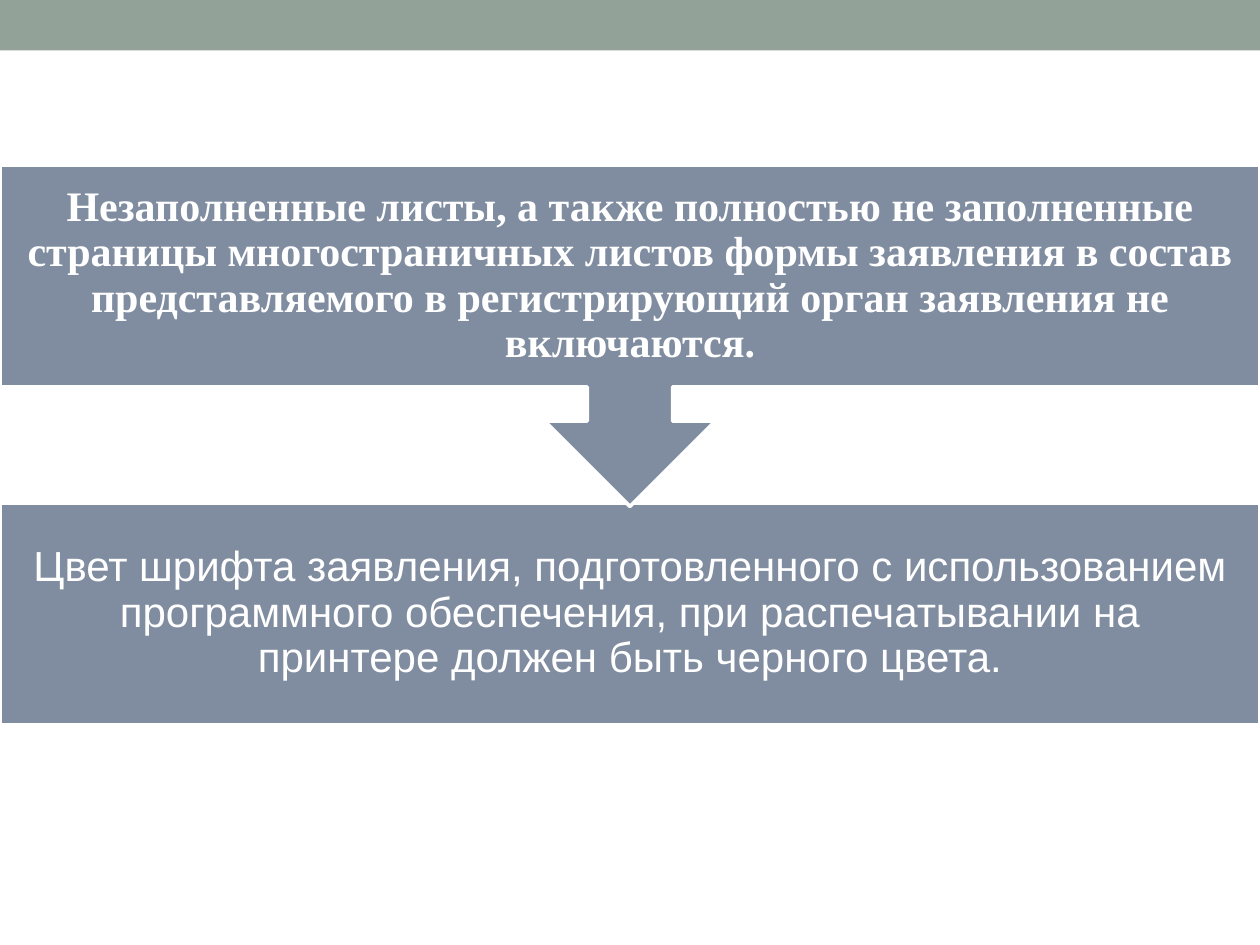
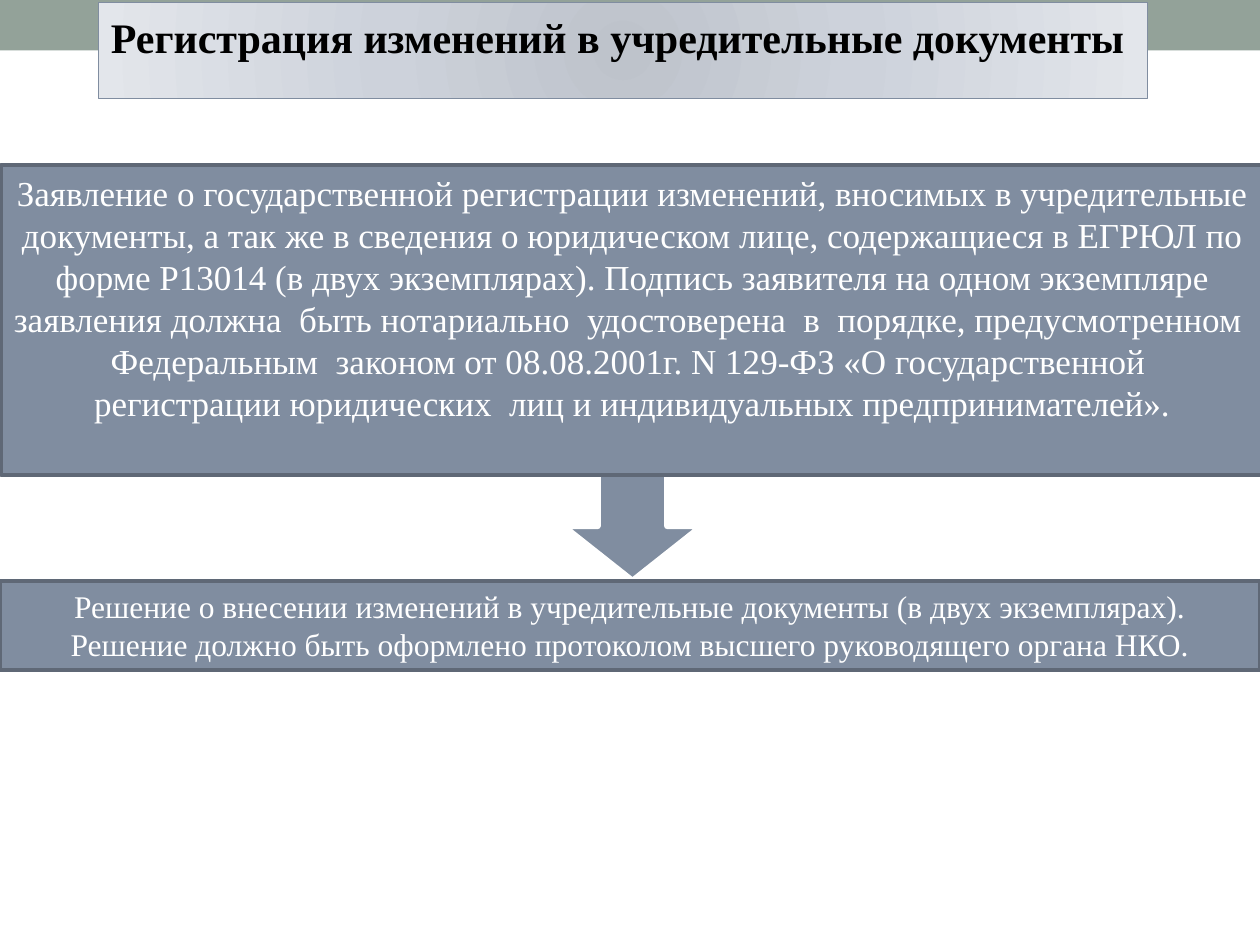
from dataclasses import dataclass

from pptx import Presentation
from pptx import util as u
from pptx.dml.color import RGBColor
from pptx.enum import shapes, text
from pptx.oxml import parse_xml
from pptx.oxml.ns import nsdecls, qn


@dataclass(frozen=True)
class Theme:
    band: str = "93A299"
    panel: str = "808DA0"
    panel_edge: str = "5F6876"
    white: str = "FFFFFF"
    black: str = "000000"
    title_stops: tuple = ((0, "BEC3CB"), (45, "CDD2DB"), (100, "E3E6EB"))
    serif: str = "Times New Roman"
    sans: str = "Arial"
    large: int = 24
    medium: int = 20
    small: int = 18
    edge: float = 2.08
    arrow_edge: float = 3.5
    title_edge: float = 0.75


TITLE_ONLY, BLANK = 5, 6
KIND = shapes.MSO_SHAPE


class Deck:
    """Holds the style and the current slide."""

    def __init__(self, theme):
        self.theme = theme
        self.show = Presentation()
        self.show.slide_width, self.show.slide_height = u.Inches(10), u.Inches(7.5)
        self.slide = None

    def new_slide(self, layout):
        self.slide = self.show.slides.add_slide(self.show.slide_layouts[layout])

    def master_band(self):
        """Draw the top band and move it to the master, behind everything."""
        band = self.shape(KIND.RECTANGLE, (0, 0, 10, 0.4), self.theme.band)
        band._element.nvSpPr.cNvPr.set("id", "100")
        self.show.slide_master.shapes._spTree.insert(2, band._element)

    def shape(self, kind, box, fill, edge=None, width=None):
        part = self.slide.shapes.add_shape(kind, *map(u.Inches, box))
        part.shadow.inherit = False
        part.fill.solid()
        part.fill.fore_color.rgb = RGBColor.from_string(fill)
        self.outline(part, edge, width)
        return part

    def outline(self, part, edge, width):
        if edge is None:
            part.line.fill.background()
        else:
            part.line.color.rgb = RGBColor.from_string(edge)
            part.line.width = u.Pt(width)

    def wording(self, part, words, color, size, font, bold=False, insets=(0.1, 0.05),
                anchor=text.MSO_ANCHOR.TOP, align=text.PP_ALIGN.CENTER, spacing=1.0):
        frame = part.text_frame
        frame.text = words
        side, top = map(u.Inches, insets)
        paragraph = frame.paragraphs[0]
        letters = paragraph.runs[0].font
        letters.color.rgb = RGBColor.from_string(color)
        formats = (
            (frame, {"word_wrap": True, "auto_size": text.MSO_AUTO_SIZE.NONE,
                     "vertical_anchor": anchor, "margin_left": side,
                     "margin_right": side, "margin_top": top, "margin_bottom": top}),
            (paragraph, {"alignment": align, "line_spacing": spacing}),
            (letters, {"name": font, "size": u.Pt(size), "bold": bold}),
        )
        for target, values in formats:
            for name, value in values.items():
                setattr(target, name, value)

    def title(self, words, box):
        heading = self.slide.shapes.title
        for name, value in zip(("left", "top", "width", "height"), box):
            setattr(heading, name, u.Inches(value))
        self.radial_fill(heading)
        self.outline(heading, self.theme.panel, self.theme.title_edge)
        self.wording(heading, words, self.theme.black, self.theme.large, self.theme.serif,
                     bold=True, insets=(0.1, 0.07), align=text.PP_ALIGN.LEFT)

    def radial_fill(self, part):
        stops = "".join(f'<a:gs pos="{at * 1000}"><a:srgbClr val="{color}"/></a:gs>'
                        for at, color in self.theme.title_stops)
        radial = parse_xml(
            f'<a:gradFill {nsdecls("a")} rotWithShape="1"><a:gsLst>{stops}</a:gsLst>'
            '<a:path path="circle"><a:fillToRect l="100000" t="100000" r="100000" b="100000"/>'
            '</a:path></a:gradFill>')
        part.fill.gradient()
        properties = part._element.spPr
        properties.replace(properties.find(qn("a:gradFill")), radial)

    def flow_panel(self, kind, box, words, font, bold=False):
        """White-edged panel with middle-anchored text."""
        panel = self.shape(kind, box, self.theme.panel, self.theme.white, self.theme.edge)
        self.wording(panel, words, self.theme.white, self.theme.large, font, bold=bold,
                     insets=(0.19, 0.19), anchor=text.MSO_ANCHOR.MIDDLE, spacing=0.9)

    def document_panel(self, box, words, size):
        """Dark-edged panel with text from the top."""
        panel = self.shape(KIND.RECTANGLE, box, self.theme.panel,
                           self.theme.panel_edge, self.theme.edge)
        self.wording(panel, words, self.theme.white, size, self.theme.serif)

    def arrow(self, box):
        self.shape(KIND.DOWN_ARROW, box, self.theme.panel,
                   self.theme.white, self.theme.arrow_edge)


def main():
    theme = Theme()
    deck = Deck(theme)

    # Rules for the sheets and the print colour
    deck.new_slide(BLANK)
    deck.master_band()
    deck.flow_panel(
        KIND.RECTANGLE, (0, 3.99, 10, 1.76),
        "Цвет шрифта заявления, подготовленного с использованием программного "
        "обеспечения, при распечатывании на принтере должен быть черного цвета.",
        theme.sans)
    deck.flow_panel(
        KIND.DOWN_ARROW_CALLOUT, (0, 1.31, 10, 2.71),
        "Незаполненные листы, а также полностью не заполненные страницы "
        "многостраничных листов формы заявления в состав представляемого в "
        "регистрирующий орган заявления не включаются.",
        theme.serif, bold=True)

    # Changes to the founding documents
    deck.new_slide(TITLE_ONLY)
    deck.title("Регистрация изменений в учредительные документы", (0.78, 0.02, 8.33, 0.76))
    deck.arrow((4.47, 3.74, 1.1, 0.87))
    deck.document_panel(
        (0.01, 1.31, 10.02, 2.46),
        "Заявление о государственной регистрации изменений, вносимых в учредительные "
        "документы, а так же в сведения о юридическом лице, содержащиеся в ЕГРЮЛ по "
        "форме Р13014 (в двух экземплярах). Подпись заявителя на одном экземпляре "
        "заявления должна  быть нотариально  удостоверена  в  порядке, "
        "предусмотренном  Федеральным  законом от 08.08.2001г. N 129-ФЗ "
        "«О государственной  регистрации юридических  лиц и индивидуальных "
        "предпринимателей».",
        theme.medium)
    deck.document_panel(
        (0, 4.61, 10, 0.71),
        "Решение о внесении изменений в учредительные документы (в двух экземплярах). "
        "Решение должно быть оформлено протоколом высшего руководящего органа НКО.",
        theme.small)

    deck.show.save("out.pptx")


if __name__ == "__main__":
    main()
